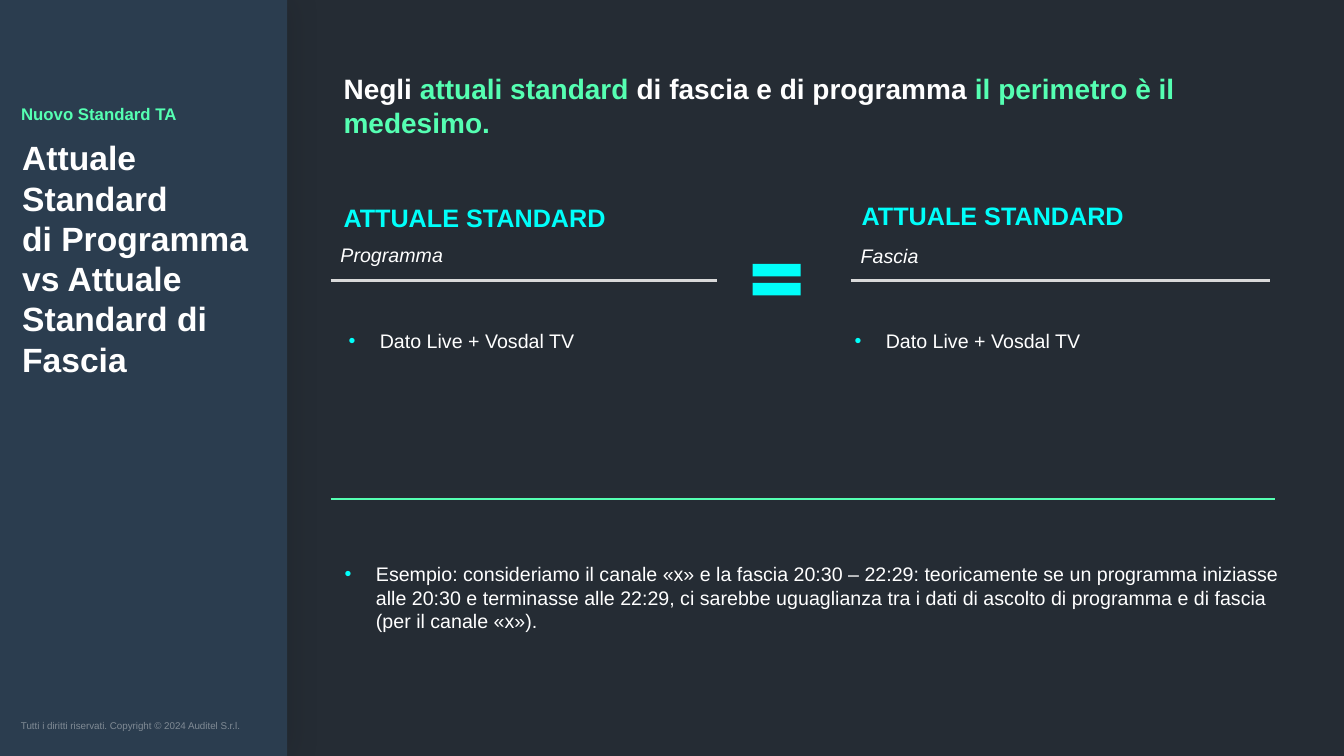
from dataclasses import dataclass

from lxml import etree
from pptx import Presentation
from pptx.dml.color import RGBColor
from pptx.enum.shapes import MSO_CONNECTOR, MSO_SHAPE
from pptx.enum.text import MSO_ANCHOR, MSO_AUTO_SIZE, PP_ALIGN
from pptx.oxml import parse_xml
from pptx.oxml.ns import nsdecls, qn
from pptx.util import Inches, Pt

STRAIGHT = MSO_CONNECTOR.STRAIGHT
RECTANGLE, EQUAL = MSO_SHAPE.RECTANGLE, MSO_SHAPE.MATH_EQUAL
TOP, MIDDLE = MSO_ANCHOR.TOP, MSO_ANCHOR.MIDDLE
FIXED, LEFT = MSO_AUTO_SIZE.NONE, PP_ALIGN.LEFT

NIGHT = RGBColor(0x25, 0x2C, 0x34)
NAVY = RGBColor(0x2B, 0x3D, 0x4F)
WHITE = RGBColor(0xFF, 0xFF, 0xFF)
SILVER = RGBColor(0xD9, 0xD9, 0xD9)
MUTED = RGBColor(0x80, 0x8B, 0x95)
GREEN = RGBColor(0x55, 0xFF, 0xB2)
CYAN = RGBColor(0x00, 0xFF, 0xFA)

# The slide is a grid of 160 columns by 90 rows
UNIT = Inches(1 / 12)
COLUMNS, ROWS = 160, 90
BULLET_INDENT = Inches(0.31)
FONT = "Arial"


@dataclass(frozen=True)
class Area:
    column: float
    row: float
    columns: float
    rows: float

    def emu(self) -> list[int]:
        return [round(value * UNIT)
                for value in (self.column, self.row, self.columns, self.rows)]


@dataclass(frozen=True)
class Standard:
    """One side of the comparison."""
    name: str
    heading: Area
    subtitle: Area
    bullet: Area
    rule_start: float
    rule_end: float


STANDARDS = (
    Standard("Programma", Area(39.72, 23.52, 48.48, 4.8),
             Area(39.36, 28.32, 46.08, 4.08), Area(40.32, 38.52, 51.6, 4.08),
             39.36, 85.32),
    Standard("Fascia", Area(101.4, 23.28, 58.56, 4.8),
             Area(101.28, 28.44, 46.08, 4.08), Area(100.56, 38.52, 51.6, 4.08),
             101.28, 151.2),
)
RULE_ROW = 33.36
EXAMPLE = ("Esempio: consideriamo il canale «x» e la fascia 20:30 – 22:29: "
           "teoricamente se un programma iniziasse alle 20:30 e terminasse alle "
           "22:29, ci sarebbe uguaglianza tra i dati di ascolto di programma e "
           "di fascia (per il canale «x»).")


def add_bullet(para) -> None:
    properties = para._p.get_or_add_pPr()
    properties.set("marL", str(BULLET_INDENT))
    properties.set("indent", str(-BULLET_INDENT))
    color = etree.SubElement(properties, qn("a:buClr"))
    etree.SubElement(color, qn("a:srgbClr")).set("val", str(CYAN))
    etree.SubElement(properties, qn("a:buFont")).set("typeface", FONT)
    etree.SubElement(properties, qn("a:buChar")).set("char", "•")


def remove_bullet(para) -> None:
    properties = para._p.get_or_add_pPr()
    properties.set("marL", "0")
    properties.set("indent", "0")
    etree.SubElement(properties, qn("a:buNone"))


def write(box, *texts: str, size: float, colors=(WHITE,), bold=False,
          italic=False, bullet=False, anchor=TOP):
    """Fill a box with one paragraph; colors are paired with texts."""
    frame = box.text_frame
    frame.word_wrap = True
    frame.auto_size = FIXED
    frame.vertical_anchor = anchor
    para = frame.paragraphs[0]
    if bullet:
        add_bullet(para)
    for index, (text, color) in enumerate(zip(texts, colors)):
        for part, line in enumerate(text.split("\n")):
            if part:
                para.add_line_break()
            span = para.add_run()
            span.text = line
            span.font.name = FONT
            span.font.size = Pt(size)
            span.font.bold = bold
            span.font.italic = italic
            span.font.color.rgb = color
    return para


def add_text(page, area: Area, *texts: str, **style):
    box = page.shapes.add_textbox(*area.emu())
    write(box, *texts, **style)
    return box


def add_block(page, kind, area: Area, color: RGBColor):
    block = page.shapes.add_shape(kind, *area.emu())
    block.shadow.inherit = False
    block.fill.solid()
    block.fill.fore_color.rgb = color
    block.line.fill.background()
    return block


def add_rule(page, start: float, end: float, row: float, color: RGBColor) -> None:
    left, right, height = (round(value * UNIT) for value in (start, end, row))
    rule = page.shapes.add_connector(STRAIGHT, left, height, right, height)
    rule.line.color.rgb = color
    rule.line.width = Pt(0)
    etree.SubElement(rule._element.spPr, qn("a:effectLst"))


def place(placeholder, area: Area) -> None:
    (placeholder.left, placeholder.top,
     placeholder.width, placeholder.height) = area.emu()


def add_sidebar(page) -> None:
    sidebar = add_block(page, RECTANGLE, Area(0, 0, 34.2, ROWS), NAVY)
    effects = sidebar._element.spPr.find(qn("a:effectLst"))
    effects.append(parse_xml(
        f'<a:outerShdw {nsdecls("a")} blurRad="{Pt(21.2)}" dist="{Pt(3)}" dir="0">'
        '<a:srgbClr val="000000"><a:alpha val="10000"/></a:srgbClr></a:outerShdw>'))
    # Behind the placeholders
    page.shapes._spTree.insert(2, sidebar._element)

    kicker = page.placeholders[1]
    place(kicker, Area(1.32, 12, 28.68, 5.28))
    para = write(kicker, "Nuovo Standard TA", size=12, colors=(GREEN,), bold=True)
    remove_bullet(para)
    para.line_spacing = 0.9
    para.space_before = Pt(0)

    title = page.shapes.title
    place(title, Area(1.44, 15.72, 31.2, 17.4))
    para = write(title, "Attuale Standard \ndi Programma vs Attuale Standard di Fascia",
                 size=24, bold=True)
    para.alignment = LEFT

    add_text(page, Area(1.32, 85.08, 32.28, 2.64),
             "Tutti i diritti riservati. Copyright © 2024 Auditel S.r.l.",
             size=7, colors=(MUTED,))


def add_comparison(page) -> None:
    for standard in STANDARDS:
        add_text(page, standard.heading, "ATTUALE STANDARD",
                 size=18, colors=(CYAN,), bold=True)
        add_text(page, standard.subtitle, standard.name, size=14, italic=True)
        add_rule(page, standard.rule_start, standard.rule_end, RULE_ROW, SILVER)
        add_text(page, standard.bullet, "Dato Live + Vosdal TV", size=14, bullet=True)
    add_block(page, EQUAL, Area(88.56, 30.12, 7.8, 6.36), CYAN)


def add_example(page) -> None:
    add_rule(page, 39.36, 151.8, 59.4, GREEN)
    box = add_text(page, Area(39.36, 60.48, 114.48, 21.24), EXAMPLE,
                   size=14, bullet=True, anchor=MIDDLE)
    frame = box.text_frame
    frame.margin_left = Inches(0.14)
    frame.margin_right = frame.margin_top = frame.margin_bottom = 0


def main() -> None:
    deck = Presentation()
    deck.slide_width, deck.slide_height = COLUMNS * UNIT, ROWS * UNIT
    page = deck.slides.add_slide(deck.slide_layouts[1])
    page.background.fill.solid()
    page.background.fill.fore_color.rgb = NIGHT

    add_sidebar(page)
    add_text(page, Area(39.72, 7.92, 114.24, 9.24),
             "Negli ", "attuali standard ", "di fascia e di programma ",
             "il perimetro è il medesimo.",
             size=20, colors=(WHITE, GREEN, WHITE, GREEN), bold=True)
    add_comparison(page)
    add_example(page)
    deck.save("out.pptx")


if __name__ == "__main__":
    main()
